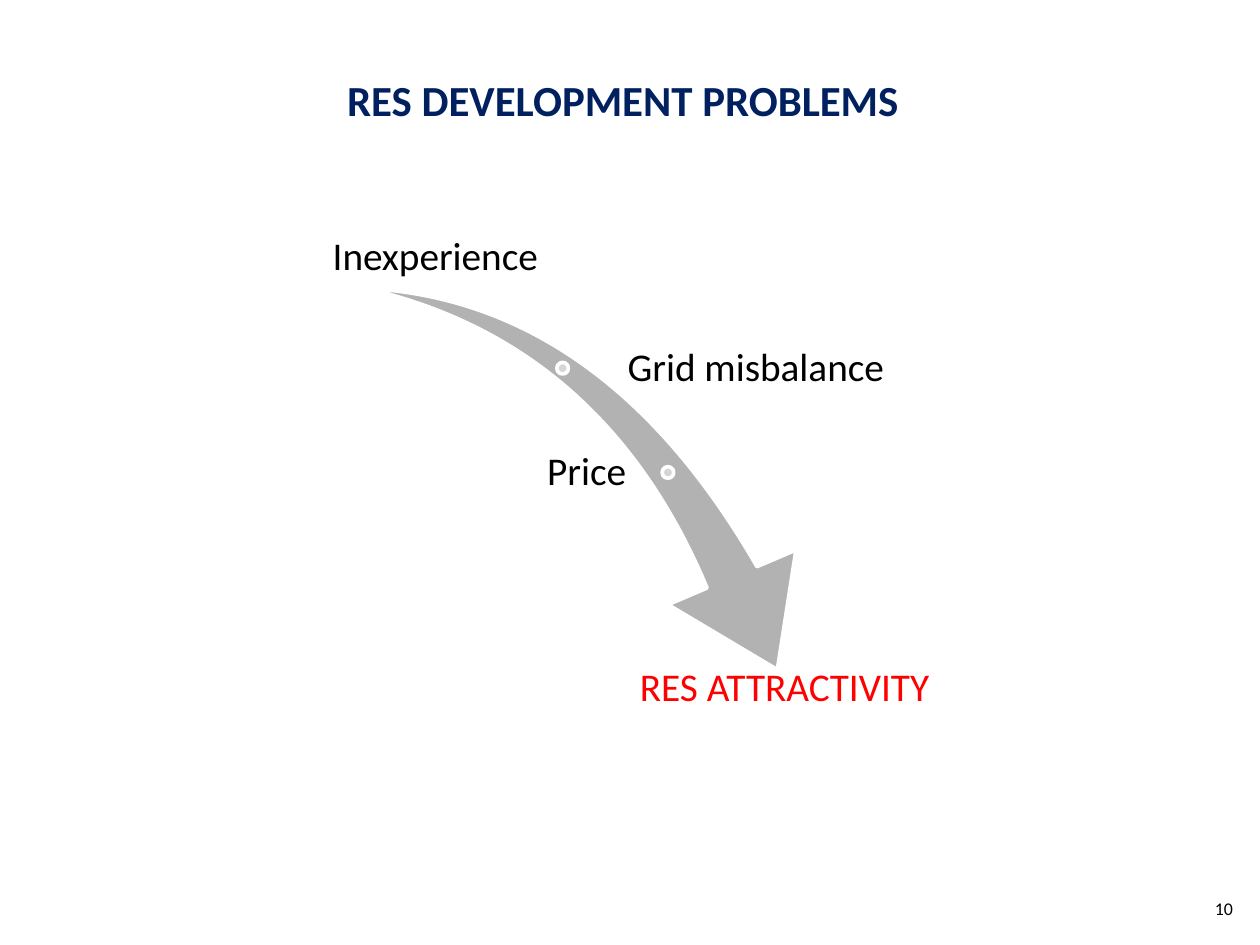
from dataclasses import dataclass

from pptx import Presentation
from pptx.dml.color import RGBColor
from pptx.enum.shapes import MSO_SHAPE as Preset
from pptx.enum.text import MSO_ANCHOR as Anchor, PP_ALIGN as Align
from pptx.shapes.autoshape import Shape
from pptx.slide import Slide
from pptx.util import Cm, Pt

FONT = "Calibri"
BLACK = "000000"
WHITE = "FFFFFF"
NAVY = "002060"
RED = "FF0000"
ARROW_GRAY = "B2B2B2"
DOT_GRAY = "D5D5D5"
DOT_SIZE = 0.23


@dataclass(frozen=True)
class Label:
    text: str
    left: float
    top: float
    width: float
    height: float = 1.78
    align: Align = Align.CENTER
    anchor: Anchor = Anchor.TOP
    color: str = BLACK
    size: float = 22
    bold: bool = False
    inset: float = 0.08
    line_spacing: float = 0.9
    wrap: bool = True


@dataclass(frozen=True)
class Dot:
    left: float
    top: float


LABELS = (
    Label("Inexperience", 6.35, 3.81, 4.5, anchor=Anchor.BOTTOM),
    Label("Grid misbalance", 12.32, 6.4, 6.2, align=Align.LEFT, anchor=Anchor.MIDDLE),
    Label("Price", 6.35, 8.46, 6.1, align=Align.RIGHT, anchor=Anchor.MIDDLE),
    Label("RES ATTRACTIVITY", 12.45, 13.11, 6.1, color=RED),
)
TITLE = Label("RES DEVELOPMENT PROBLEMS", 0.33, 1.45, 23.95, 1.02,
              color=NAVY, size=24, bold=True, inset=0, line_spacing=1)
PAGE_NUMBER = Label("10", 24, 17.73, 0.53, 0.43, align=Align.LEFT,
                    size=10, inset=0, line_spacing=1, wrap=False)
DOTS = (Dot(11, 7.16), Dot(13.08, 9.22))


def rgb(value: str) -> RGBColor:
    return RGBColor.from_string(value)


def add_label(slide: Slide, label: Label) -> None:
    box = slide.shapes.add_textbox(
        Cm(label.left), Cm(label.top), Cm(label.width), Cm(label.height))
    frame = box.text_frame
    frame.word_wrap = label.wrap
    frame.vertical_anchor = label.anchor
    frame.margin_left = frame.margin_right = Cm(label.inset)
    frame.margin_top = frame.margin_bottom = Cm(label.inset)
    paragraph = frame.paragraphs[0]
    paragraph.text = label.text
    paragraph.alignment = label.align
    paragraph.line_spacing = label.line_spacing
    paragraph.font.name = FONT
    paragraph.font.size = Pt(label.size)
    paragraph.font.bold = label.bold
    paragraph.font.color.rgb = rgb(label.color)


def add_outlined_shape(slide: Slide, preset: Preset, left: float, top: float,
                       width: float, height: float, fill: str) -> Shape:
    shape = slide.shapes.add_shape(preset, Cm(left), Cm(top), Cm(width), Cm(height))
    shape.shadow.inherit = False
    shape.fill.solid()
    shape.fill.fore_color.rgb = rgb(fill)
    shape.line.color.rgb = rgb(WHITE)
    shape.line.width = Pt(2)
    return shape


def add_arrow(slide: Slide) -> None:
    arrow = add_outlined_shape(
        slide, Preset.SWOOSH_ARROW, 7.01, 5.99, 9.55, 6.65, ARROW_GRAY)
    arrow.rotation = 73.3
    arrow.adjustments[0] = 0.16
    arrow.adjustments[1] = 0.31


def main() -> None:
    presentation = Presentation()
    presentation.slide_width = Cm(24.89)
    presentation.slide_height = Cm(18.67)
    slide = presentation.slides.add_slide(presentation.slide_layouts[6])

    add_label(slide, PAGE_NUMBER)
    add_label(slide, TITLE)
    add_arrow(slide)
    for dot in DOTS:
        add_outlined_shape(
            slide, Preset.OVAL, dot.left, dot.top, DOT_SIZE, DOT_SIZE, DOT_GRAY)
    for label in LABELS:
        add_label(slide, label)

    presentation.save("out.pptx")


if __name__ == "__main__":
    main()
